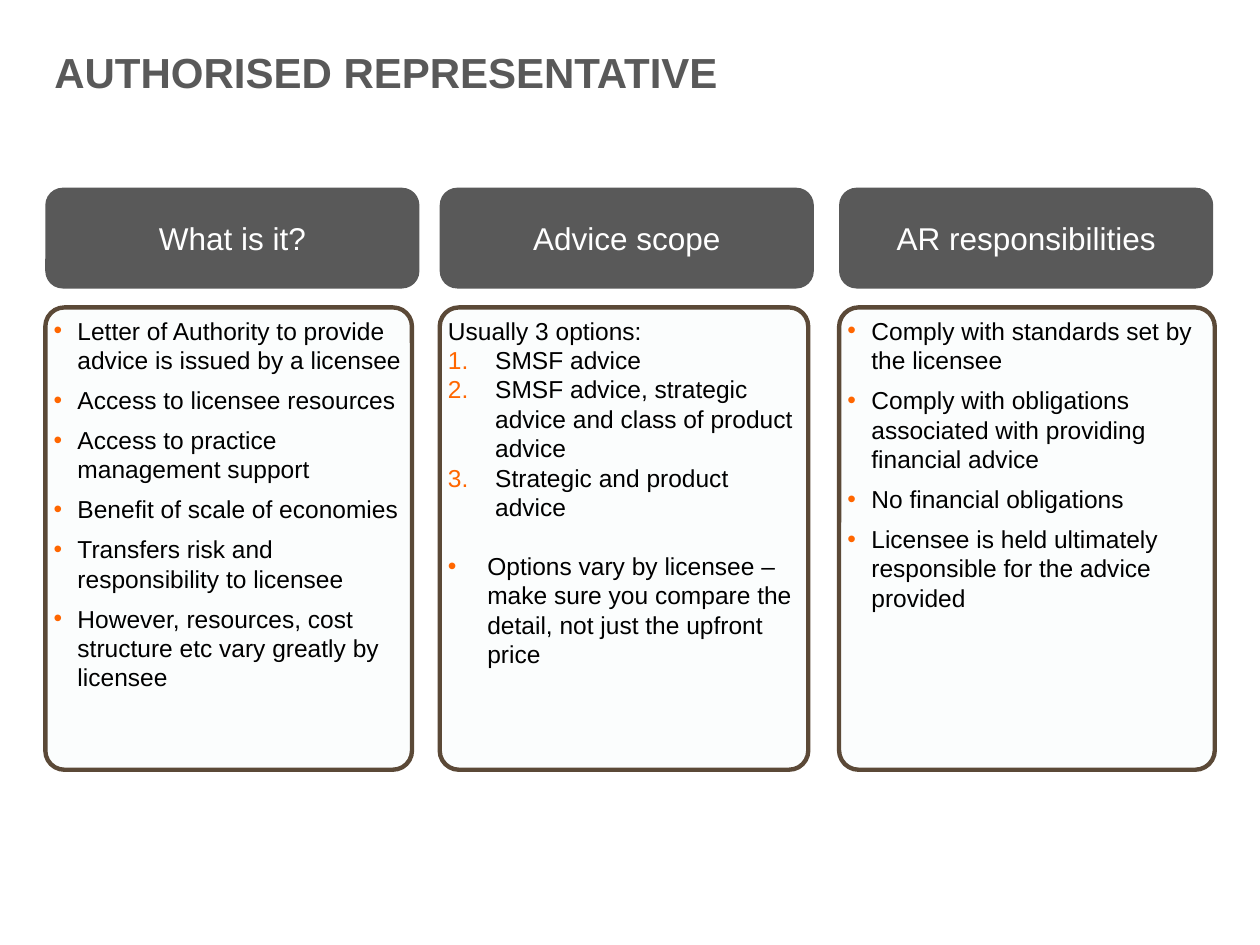
from dataclasses import dataclass

import pptx
import pptx.dml.color
import pptx.enum.shapes
import pptx.enum.text
import pptx.oxml.ns
import pptx.util
from lxml import etree

Pt = pptx.util.Pt
Align = pptx.enum.text.PP_ALIGN
Anchor = pptx.enum.text.MSO_ANCHOR
qn = pptx.oxml.ns.qn

FONT = "Arial"
GREY, BROWN, ORANGE = "595959", "5B4937", "FF6600"
PALE, BLACK, WHITE = "BBE0E3", "000000", "FFFFFF"
HEADER_TOP, HEADER_WIDTH, HEADER_HEIGHT = 107.3, 213.8, 57.6
PANEL_TOP, PANEL_HEIGHT = 175.7, 264.2


@dataclass
class Item:
    text: str
    marker: str = "bullet"
    indent: float = 13.7
    before: float = 0
    after: float = 6


@dataclass
class Column:
    left: float
    panel_width: float
    heading: str
    items: list[Item]


def numbered(text: str) -> Item:
    return Item(text, marker="number", indent=27, after=0)


COLUMNS = [
    Column(25.9, 209.5, "What is it?", [
        Item("Letter of Authority to provide advice is issued by a licensee"),
        Item("Access to licensee resources"),
        Item("Access to practice management support"),
        Item("Benefit of scale of economies"),
        Item("Transfers risk and responsibility to licensee"),
        Item("However, resources, cost structure etc vary greatly by licensee"),
    ]),
    Column(251.3, 210.6, "Advice scope", [
        Item("Usually 3 options:", marker="", indent=0, after=0),
        numbered("SMSF advice"),
        numbered("SMSF advice, strategic advice and class of product advice"),
        numbered("Strategic and product advice"),
        Item("Options vary by licensee – make sure you compare the detail, "
             "not just the upfront price", indent=22.5, before=16.8, after=0),
    ]),
    Column(479.5, 214.7, "AR responsibilities", [
        Item("Comply with standards set by the licensee"),
        Item("Comply with obligations associated with providing financial advice"),
        Item("No financial obligations"),
        Item("Licensee is held ultimately responsible for the advice provided"),
    ]),
]


def rgb(value: str) -> pptx.dml.color.RGBColor:
    return pptx.dml.color.RGBColor.from_string(value)


def add_marker(paragraph, marker: str, indent: float) -> None:
    """Give the paragraph a hanging indent with an orange bullet or number."""
    properties = paragraph._p.get_or_add_pPr()
    properties.set("marL", str(Pt(indent)))
    properties.set("indent", str(-Pt(indent)))
    colour = etree.SubElement(properties, qn("a:buClr"))
    etree.SubElement(colour, qn("a:srgbClr"), val=ORANGE)
    etree.SubElement(properties, qn("a:buFont"), typeface=FONT)
    if marker == "number":
        etree.SubElement(properties, qn("a:buAutoNum"), type="arabicPeriod")
    else:
        etree.SubElement(properties, qn("a:buChar"), char="•")


def write(paragraph, text: str, *, size: float, colour: str, bold: bool = False,
          align=Align.LEFT, before: float = 0, after: float = 0,
          line_spacing: float = 1.0) -> None:
    paragraph.alignment = align
    paragraph.space_before = Pt(before)
    paragraph.space_after = Pt(after)
    paragraph.line_spacing = line_spacing
    run = paragraph.add_run()
    run.text = text
    run.font.name = FONT
    run.font.size = Pt(size)
    run.font.bold = bold
    run.font.color.rgb = rgb(colour)


def add_box(slide, left: float, top: float, width: float, height: float, *,
            rounding: float, fill: str, anchor):
    shape = slide.shapes.add_shape(
        pptx.enum.shapes.MSO_SHAPE.ROUNDED_RECTANGLE,
        Pt(left), Pt(top), Pt(width), Pt(height))
    shape.adjustments[0] = rounding
    shape.shadow.inherit = False
    shape.fill.solid()
    shape.fill.fore_color.rgb = rgb(fill)
    shape.line.fill.background()
    frame = shape.text_frame
    frame.word_wrap = True
    frame.vertical_anchor = anchor
    frame.margin_left = frame.margin_right = Pt(1.5)
    frame.margin_top = frame.margin_bottom = Pt(1.5)
    return shape


def add_panel(slide, column: Column) -> None:
    panel = add_box(slide, column.left, PANEL_TOP, column.panel_width, PANEL_HEIGHT,
                    rounding=0.052, fill=PALE, anchor=Anchor.TOP)
    fill_colour = panel._element.spPr.find(qn("a:solidFill")).find(qn("a:srgbClr"))
    etree.SubElement(fill_colour, qn("a:alpha"), val="5000")
    panel.line.color.rgb = rgb(BROWN)
    panel.line.width = Pt(2.5)
    frame = panel.text_frame
    for index, item in enumerate(column.items):
        paragraph = frame.add_paragraph() if index else frame.paragraphs[0]
        if item.marker:
            add_marker(paragraph, item.marker, item.indent)
        write(paragraph, item.text, size=14, colour=BLACK,
              before=item.before, after=item.after)


def add_header(slide, column: Column) -> None:
    header = add_box(slide, column.left, HEADER_TOP, HEADER_WIDTH, HEADER_HEIGHT,
                     rounding=0.173, fill=GREY, anchor=Anchor.MIDDLE)
    write(header.text_frame.paragraphs[0], column.heading,
          size=18, colour=WHITE, align=Align.CENTER)


def add_title(slide, text: str) -> None:
    title = slide.shapes.title
    title.left, title.top, title.width, title.height = Pt(23.8), Pt(28.8), Pt(545.8), Pt(61.9)
    frame = title.text_frame
    frame.word_wrap = True
    frame.auto_size = pptx.enum.text.MSO_AUTO_SIZE.NONE
    frame.vertical_anchor = Anchor.TOP
    write(frame.paragraphs[0], text, size=24, colour=GREY, bold=True, line_spacing=0.8)


def main() -> None:
    presentation = pptx.Presentation()
    presentation.slide_width, presentation.slide_height = Pt(720), Pt(540)
    slide = presentation.slides.add_slide(presentation.slide_layouts[5])
    add_title(slide, "AUTHORISED REPRESENTATIVE")
    for column in COLUMNS:
        add_panel(slide, column)
        add_header(slide, column)
    presentation.save("out.pptx")


if __name__ == "__main__":
    main()
